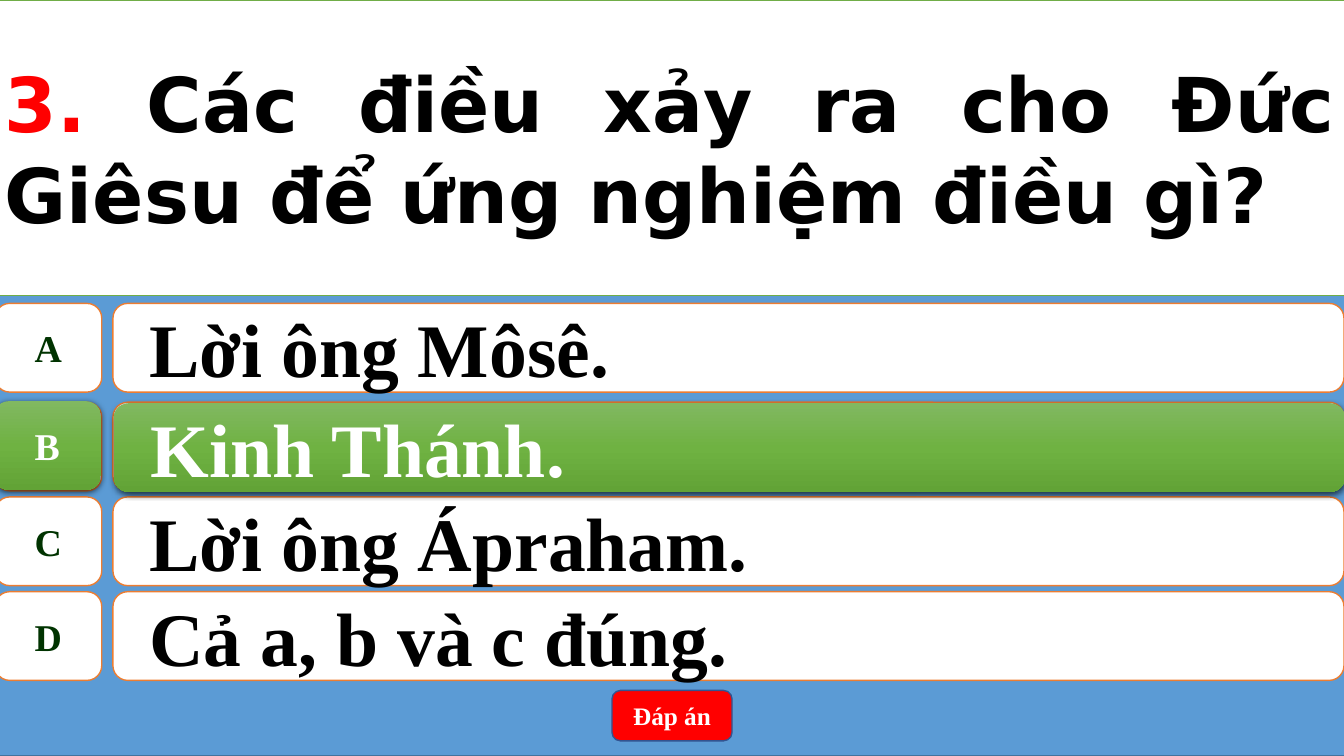
from copy import deepcopy

from pptx import Presentation
from pptx.dml.color import RGBColor
from pptx.enum.shapes import MSO_SHAPE as SHAPE
from pptx.enum.text import MSO_ANCHOR as ANCHOR, PP_ALIGN as ALIGN
from pptx.oxml import parse_xml
from pptx.oxml.ns import nsdecls, qn
from pptx.util import Inches, Pt

COLORS = {
    "panel": "5B9BD5", "panel_line": "43739E",
    "white": "FFFFFF", "black": "000000", "red": "FF0000",
    "orange": "ED7D31", "green": "70AD47", "letter": "003300",
    "button_line": "325491",
    "grad_top": "81B861", "grad_mid": "6FB242", "grad_end": "62A336",
}
GRADIENT = [(0, "grad_top"), (0.5, "grad_mid"), (1, "grad_end")]
SERIF, SANS = "Times New Roman", "DejaVu Sans"

LEFT, WIDTH = -0.05, 13.39
ROW_H, LETTER_W, ANSWER_X, ANSWER_W = 0.88, 1.06, 1.17, 12.21
ANSWERS = [
    ("A", "Lời ông Môsê.", 3.01),
    ("B", "Kinh Thánh.", 3.99),
    ("C", "Lời ông Ápraham.", 4.93),
    ("D", "Cả a, b và c đúng.", 5.87),
]


def rgb(name):
    return RGBColor.from_string(COLORS[name])


def add_box(shapes, kind, box, fill=None, line=None):
    sp = shapes.add_shape(kind, *[Inches(v) for v in box])
    sp.shadow.inherit = False
    if fill:
        sp.fill.solid()
        sp.fill.fore_color.rgb = rgb(fill)
    if line:
        sp.line.color.rgb = rgb(line)
        sp.line.width = Pt(1)
    else:
        sp.line.fill.background()
    return sp


def add_text(sp, text, size, color, font=SERIF, align=ALIGN.CENTER, wrap=True):
    """Append a bold run to the shape's only paragraph."""
    tf = sp.text_frame
    tf.word_wrap = wrap
    tf.vertical_anchor = ANCHOR.MIDDLE
    p = tf.paragraphs[0]
    p.alignment = align
    r = p.add_run()
    r.text = text
    r.font.name, r.font.size, r.font.bold = font, Pt(size), True
    r.font.color.rgb = rgb(color)
    return p


def highlight(sp):
    """Green vertical gradient with a soft shadow below."""
    sp.fill.gradient()
    sp.fill.gradient_angle = 270
    spPr = sp._element.spPr
    stops = spPr.find(".//" + qn("a:gsLst"))
    stops.append(deepcopy(stops[-1]))
    for stop, (position, color) in zip(sp.fill.gradient_stops, GRADIENT):
        stop.position = position
        stop.color.rgb = rgb(color)
    spPr.find(qn("a:effectLst")).append(parse_xml(
        f'<a:outerShdw {nsdecls("a")} blurRad="{Pt(4.5)}" dist="{Pt(1.5)}" '
        'dir="5400000" algn="ctr" rotWithShape="0">'
        f'<a:srgbClr val="{COLORS["black"]}"><a:alpha val="63000"/></a:srgbClr>'
        '</a:outerShdw>'))


def add_answer(s, x, y, letter, answer, correct=False):
    """One row: letter tile and answer bar, grouped."""
    shapes = s.shapes.add_group_shape().shapes
    fill, line = (None, None) if correct else ("white", "orange")
    dx, dy = (-0.01, -0.01) if correct else (0, 0)
    tile = add_box(shapes, SHAPE.FLOWCHART_ALTERNATE_PROCESS,
                   (x + dx, y + dy, LETTER_W, ROW_H), fill, line)
    bar = add_box(shapes, SHAPE.ROUNDED_RECTANGLE,
                  (x + ANSWER_X - dx, y - dy, ANSWER_W, ROW_H), fill, line)
    if correct:
        highlight(tile)
        highlight(bar)
    add_text(tile, letter, 27, "white" if correct else "letter", wrap=False)
    p = add_text(bar, answer, 54, "white" if correct else "black",
                 align=ALIGN.LEFT)
    p.level = 1
    pPr = p._p.get_or_add_pPr()
    pPr.set("marL", str(Inches(0.5)))
    pPr.set("indent", str(Inches(-0.28)))


def add_button(s, box):
    sp = add_box(s.shapes, SHAPE.ROUNDED_RECTANGLE, box, "red", "button_line")
    add_text(sp, "Đáp án", 18, "white")


def add_question(s, box):
    sp = add_box(s.shapes, SHAPE.RECTANGLE, box, "white", "green")
    for text, color in [
        ("3. ", "red"),
        ("Các điều xảy ra cho Đức Giêsu để ứng nghiệm điều gì?", "black"),
    ]:
        add_text(sp, text, 54, color, font=SANS, align=ALIGN.JUSTIFY)


def main():
    prs = Presentation()
    prs.slide_width, prs.slide_height = Inches(13.33), Inches(7.5)
    s = prs.slides.add_slide(prs.slide_layouts[6])

    # Blue panel
    add_box(s.shapes, SHAPE.RECTANGLE, (LEFT, 0, WIDTH, 7.5),
            "panel", "panel_line")
    # Answers, with the correct one highlighted on top
    for letter, answer, y in ANSWERS:
        add_answer(s, LEFT, y, letter, answer)
    letter, answer, y = ANSWERS[1]
    add_answer(s, LEFT, y, letter, answer, correct=True)
    # Button and question
    add_button(s, (6.07, 6.85, 1.19, 0.5))
    add_question(s, (LEFT, 0, WIDTH, 2.93))

    prs.save("out.pptx")


if __name__ == "__main__":
    main()
